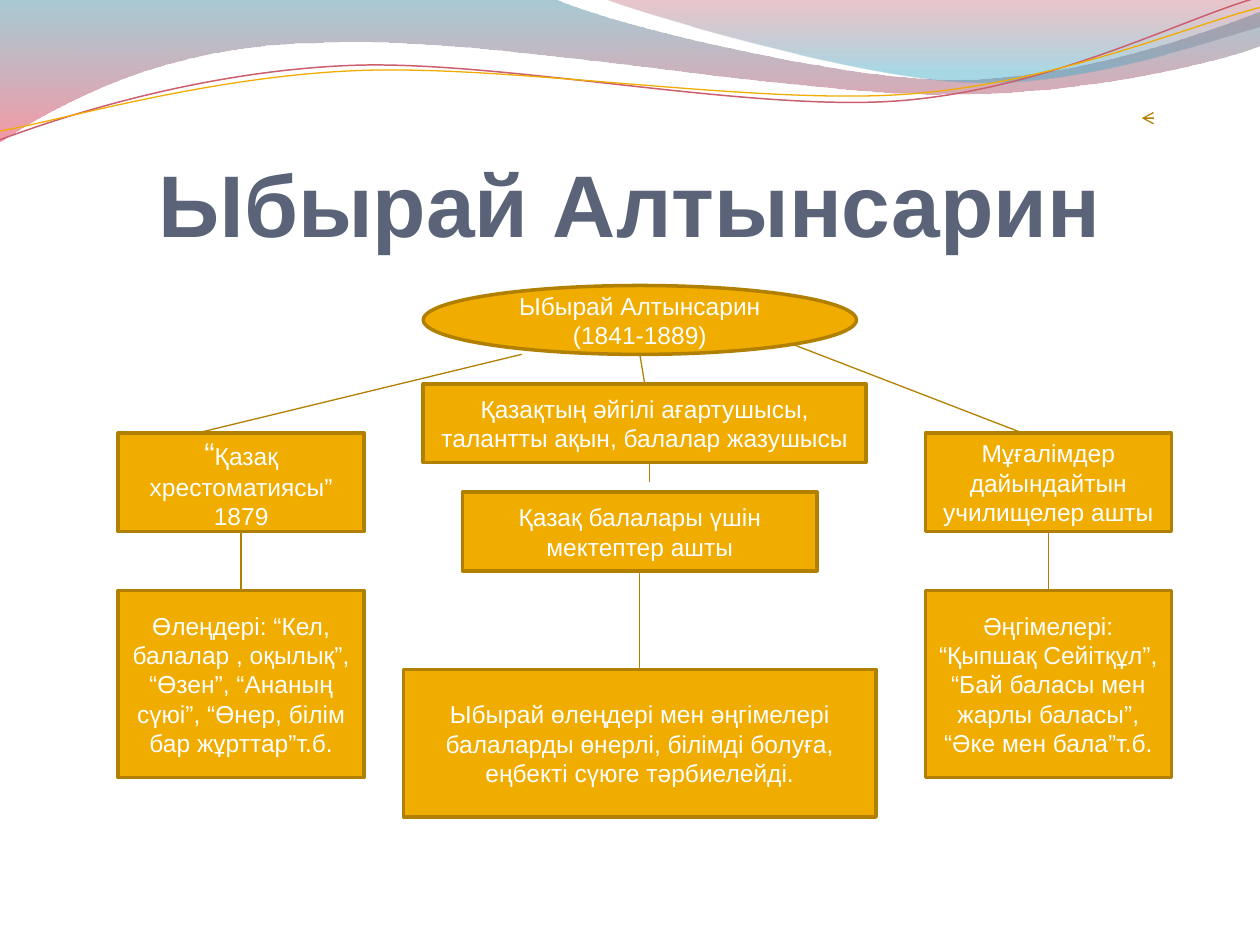
import pptx
import pptx.dml.color
import pptx.enum.shapes
import pptx.enum.text
import pptx.oxml.ns
import pptx.util
from lxml import etree

Pt = pptx.util.Pt
RGBColor = pptx.dml.color.RGBColor
qn = pptx.oxml.ns.qn
MSO_SHAPE = pptx.enum.shapes.MSO_SHAPE
MSO_ANCHOR = pptx.enum.text.MSO_ANCHOR

AMBER = RGBColor(0xF0, 0xAD, 0x00)
DARK_AMBER = RGBColor(0xB2, 0x80, 0x00)
WHITE = RGBColor(0xFF, 0xFF, 0xFF)
SLATE = RGBColor(0x5A, 0x63, 0x78)
TEAL = RGBColor(0x3F, 0x8A, 0x9F)
CORAL = RGBColor(0xEF, 0x44, 0x5B)
CRIMSON = RGBColor(0xB8, 0x42, 0x53)
SKY = RGBColor(0x42, 0xAB, 0xC7)
ROSE = RGBColor(0xCB, 0x5F, 0x6E)


def write_text(frame, text, size=14, color=WHITE, bold=False,
               anchor=MSO_ANCHOR.MIDDLE, quote_size=None):
    """Fill the frame with one centred paragraph; quote_size resizes its first character."""
    frame.word_wrap = True
    frame.vertical_anchor = anchor
    paragraph = frame.paragraphs[0]
    paragraph.alignment = pptx.enum.text.PP_ALIGN.CENTER
    pieces = [(text[0], quote_size), (text[1:], size)] if quote_size else [(text, size)]
    for piece, piece_size in pieces:
        run = paragraph.add_run()
        run.text = piece
        run.font.name = "Arial"
        run.font.size = Pt(piece_size)
        run.font.bold = bold
        run.font.color.rgb = color


def draw_outline(segments, closed):
    """Draw a freeform from points: 2 numbers are a line end, 6 a Bezier curve."""
    start, *rest = segments
    builder = slide.shapes.build_freeform(Pt(start[0]), Pt(start[1]), scale=1.0)
    points = [(Pt(x), Pt(y)) for segment in rest
              for x, y in zip(segment[::2], segment[1::2])]
    builder.add_line_segments(points, close=closed)
    outline = builder.convert_to_shape()
    outline.shadow.inherit = False
    # Every three points of a curve become one Bezier element
    steps = iter(list(outline._element.iter(qn("a:lnTo"))))
    for segment in rest:
        first = next(steps)
        if len(segment) == 6:
            first.tag = qn("a:cubicBezTo")
            for follower in (next(steps), next(steps)):
                first.append(follower[0])
                follower.getparent().remove(follower)
    return outline


presentation = pptx.Presentation()
presentation.slide_width = Pt(720)
presentation.slide_height = Pt(540)
slide = presentation.slides.add_slide(presentation.slide_layouts[6])

# Header waves: (position, colour, opacity in percent) for each gradient stop
waves = [
    ([(0, -0.7), (316.8, -0.7), (342.7, 12.2, 478.1, 45.4, 545.8, 45.4),
      (614.2, 45.4, 689.8, 18.7, 720, 6.5), (720.7, 25.9),
      (707.8, 31.7, 626.4, 54.7, 537.1, 54), (447.8, 54, 275, 20.2, 185, 24.5),
      (92.9, 25.2, 33.1, 59.8, -0.7, 81.4)],
     [(0, TEAL, 45), (1, CORAL, 55)]),
    ([(344.9, -0.7), (366.5, 7.9, 491, 44.6, 553.7, 46.8),
      (616.3, 49.7, 691.9, 23, 720, 15.1), (720, 0)],
     [(0, CRIMSON, 30), (0.8, SKY, 45)]),
]
for segments, stops in waves:
    wave = draw_outline(segments, closed=True)
    wave.line.fill.background()
    wave.fill.gradient()
    wave.fill.gradient_angle = 270
    for stop, (position, color, _) in zip(wave.fill.gradient_stops, stops):
        stop.position = position
        stop.color.rgb = color
    for tint, (_, _, opacity) in zip(wave._element.spPr.iter(qn("a:srgbClr")), stops):
        etree.SubElement(tint, qn("a:alpha")).set("val", str(opacity * 1000))

ripples = [
    ([(-1.4, 62.9), (33.7, 51.6, 114, 29.4, 199.8, 29.9),
      (284.8, 30.3, 425.8, 67.2, 512.4, 64.9),
      (599, 62.4, 676.4, 25.7, 720.2, 15.6)], ROSE, 0.85),
    ([(-1.2, 57.9), (33, 53.7, 118.3, 32.5, 204, 33),
      (290.5, 33.5, 429, 63.1, 515.5, 61.3),
      (601.4, 59.6, 678.5, 30.1, 721.4, 21.3)], AMBER, 0.75),
]
for segments, color, width in ripples:
    ripple = draw_outline(segments, closed=False)
    ripple.rotation = 357.3
    ripple.fill.background()
    ripple.line.color.rgb = color
    ripple.line.width = Pt(width)

title = slide.shapes.add_textbox(Pt(36), Pt(55.5), Pt(648), Pt(90)).text_frame
title.margin_left = title.margin_right = title.margin_bottom = 0
write_text(title, "Ыбырай Алтынсарин", size=50, color=SLATE, bold=True,
           anchor=MSO_ANCHOR.BOTTOM)

# Diagram nodes
LEFT, RIGHT, SIDE_WIDTH = 67.5, 528.75, 140.63
UPPER, UPPER_HEIGHT = 247.5, 56.25
LOWER, LOWER_HEIGHT = 337.5, 106.88
nodes = {
    "person": (241.88, 163.13, 247.5, 39.38, "Ыбырай Алтынсарин (1841-1889)"),
    "educator": (241.88, 219.38, 253.13, 45,
                 "Қазақтың әйгілі ағартушысы, талантты ақын, балалар жазушысы"),
    "textbook": (LEFT, UPPER, SIDE_WIDTH, UPPER_HEIGHT, "“Қазақ хрестоматиясы” 1879"),
    "schools": (264.38, 281.25, 202.5, 45, "Қазақ балалары үшін мектептер ашты"),
    "colleges": (RIGHT, UPPER, SIDE_WIDTH, UPPER_HEIGHT,
                 "Мұғалімдер дайындайтын училищелер ашты"),
    "poems": (LEFT, LOWER, SIDE_WIDTH, LOWER_HEIGHT,
              "Өлеңдері: “Кел, балалар , оқылық”, “Өзен”, “Ананың сүюі”, "
              "“Өнер, білім бар жұрттар”т.б."),
    "stories": (RIGHT, LOWER, SIDE_WIDTH, LOWER_HEIGHT,
                "Әңгімелері: “Қыпшақ Сейітқұл”, “Бай баласы мен жарлы баласы”, "
                "“Әке мен бала”т.б."),
    "lesson": (230.63, 382.5, 270, 84.38,
               "Ыбырай өлеңдері мен әңгімелері балаларды өнерлі, білімді болуға, "
               "еңбекті сүюге тәрбиелейді."),
}
drawn = {}
for name, (left, top, width, height, text) in nodes.items():
    preset = MSO_SHAPE.OVAL if name == "person" else MSO_SHAPE.RECTANGLE
    node = slide.shapes.add_shape(preset, Pt(left), Pt(top), Pt(width), Pt(height))
    node.shadow.inherit = False
    node.fill.solid()
    node.fill.fore_color.rgb = AMBER
    node.line.color.rgb = DARK_AMBER
    node.line.width = Pt(2)
    write_text(node.text_frame, text, quote_size=18 if name == "textbook" else None)
    drawn[name] = node

# Links: loose ones by their ends, joined ones from bottom middle to top middle
loose_links = [
    (298.13, 202.5, 112.5, 247.5),
    (365.63, 202.5, 368.44, 219.38),
    (452.88, 196.73, 584.5, 247.5),
    (371.25, 264.38, 371.25, 275.63),
    (658.13, 67.5, 652.5, 67.5),
]
joined_links = [("textbook", "poems"), ("schools", "lesson"), ("colleges", "stories")]
STRAIGHT = pptx.enum.shapes.MSO_CONNECTOR.STRAIGHT
links = [slide.shapes.add_connector(STRAIGHT, *(Pt(end) for end in ends))
         for ends in loose_links]
arrow = links[-1]
for upper, lower in joined_links:
    link = slide.shapes.add_connector(STRAIGHT, 0, 0, 0, 0)
    link.begin_connect(drawn[upper], 2)
    link.end_connect(drawn[lower], 0)
    links.append(link)
for link in links:
    link.line.color.rgb = DARK_AMBER
    link.line.width = Pt(0.75)
    etree.SubElement(link._element.spPr, qn("a:effectLst"))
arrow_line = arrow._element.spPr.find(qn("a:ln"))
etree.SubElement(arrow_line, qn("a:tailEnd")).set("type", "arrow")

presentation.save("out.pptx")
